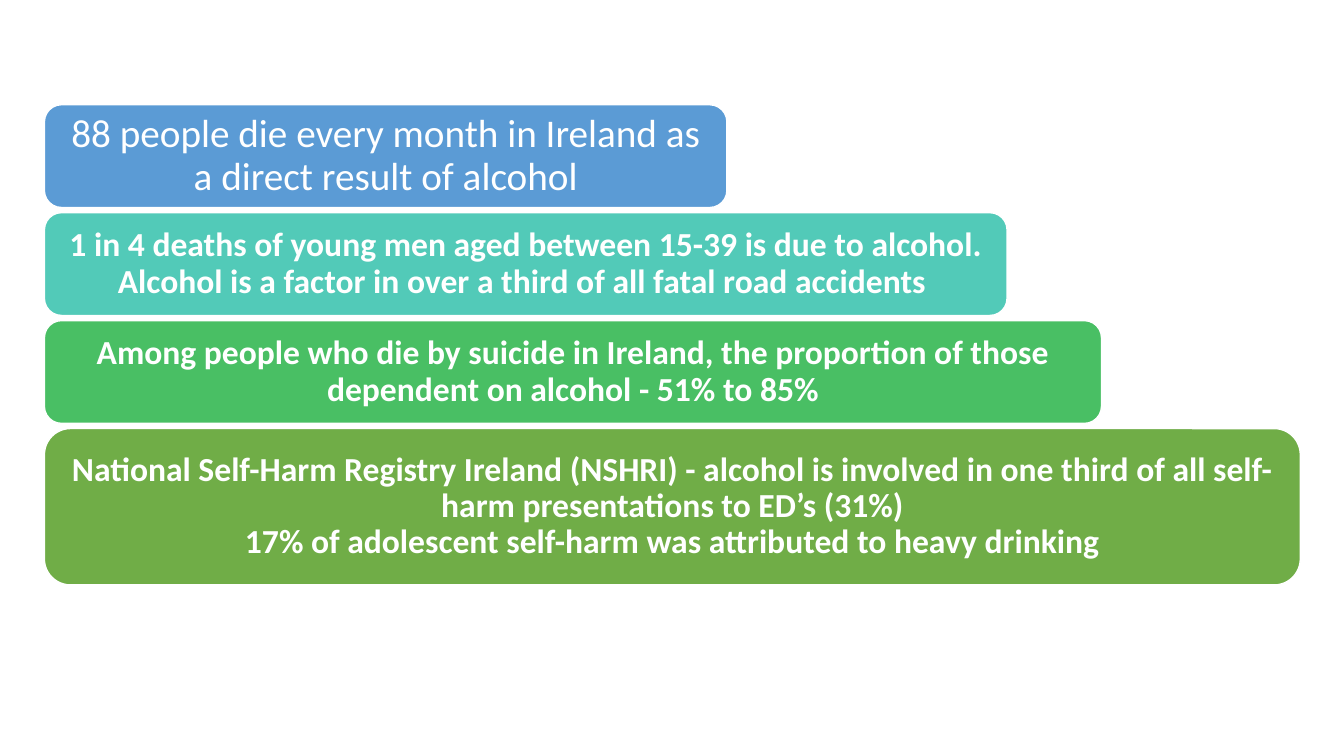
from dataclasses import dataclass

import pptx
import pptx.dml.color
import pptx.enum.shapes
import pptx.enum.text
import pptx.slide
import pptx.util
from pptx.util import Cm


@dataclass(frozen=True)
class Theme:
    font: str = "Calibri"
    lead_size: int = 28
    body_size: int = 24
    white: str = "FFFFFF"
    blue: str = "5B9BD5"
    teal: str = "52CAB8"
    green: str = "49BF64"
    olive: str = "70AD47"


@dataclass(frozen=True)
class Fact:
    lines: tuple[str, ...]
    fill: str
    width: float
    height: float = 2.59
    size: int = Theme.body_size
    bold: bool = True
    side_inset: float = 0.25
    end_inset: float = 0.13


THEME = Theme()
LEFT = 1.12
TOP = 2.64
GAP = 0.13

FACTS = (
    Fact(
        ("88 people die every month in Ireland as a direct result of alcohol",),
        THEME.blue, 17.2, size=THEME.lead_size, bold=False,
        side_inset=0.3, end_inset=0.15,
    ),
    Fact(
        ("1 in 4 deaths of young men aged between 15-39 is due to alcohol. "
         "Alcohol is a factor in over a third of all fatal road accidents ",),
        THEME.teal, 24.26,
    ),
    Fact(
        ("Among people who die by suicide in Ireland, the proportion of those "
         "dependent on alcohol - 51% to 85%",),
        THEME.green, 26.64,
    ),
    Fact(
        ("National Self-Harm Registry Ireland (NSHRI) - alcohol is involved in "
         "one third of all self-harm presentations to ED’s (31%)",
         "17% of adolescent self-harm was attributed to heavy drinking"),
        THEME.olive, 31.65, height=3.94,
    ),
)


def rgb(value: str) -> pptx.dml.color.RGBColor:
    return pptx.dml.color.RGBColor.from_string(value)


def draw_fact(slide: pptx.slide.Slide, fact: Fact, top: float) -> None:
    bar = slide.shapes.add_shape(
        pptx.enum.shapes.MSO_SHAPE.ROUNDED_RECTANGLE,
        Cm(LEFT), Cm(top), Cm(fact.width), Cm(fact.height),
    )
    bar.shadow.inherit = False
    bar.fill.solid()
    bar.fill.fore_color.rgb = rgb(fact.fill)
    bar.line.color.rgb = rgb(THEME.white)
    bar.line.width = pptx.util.Pt(1)

    frame = bar.text_frame
    frame.word_wrap = True
    frame.vertical_anchor = pptx.enum.text.MSO_ANCHOR.MIDDLE
    frame.margin_left = frame.margin_right = Cm(fact.side_inset)
    frame.margin_top = frame.margin_bottom = Cm(fact.end_inset)

    statement = frame.paragraphs[0]
    statement.alignment = pptx.enum.text.PP_ALIGN.CENTER
    statement.line_spacing = 0.9
    for index, line in enumerate(fact.lines):
        if index:
            statement.add_line_break()
        run = statement.add_run()
        run.text = line
        run.font.name = THEME.font
        run.font.size = pptx.util.Pt(fact.size)
        run.font.bold = fact.bold
        run.font.color.rgb = rgb(THEME.white)


def main() -> None:
    deck = pptx.Presentation()
    deck.slide_width = Cm(33.87)
    deck.slide_height = Cm(19.05)
    slide = deck.slides.add_slide(deck.slide_layouts.get_by_name("Blank"))
    top = TOP
    for fact in FACTS:
        draw_fact(slide, fact, top)
        top += fact.height + GAP
    deck.save("out.pptx")


if __name__ == "__main__":
    main()
